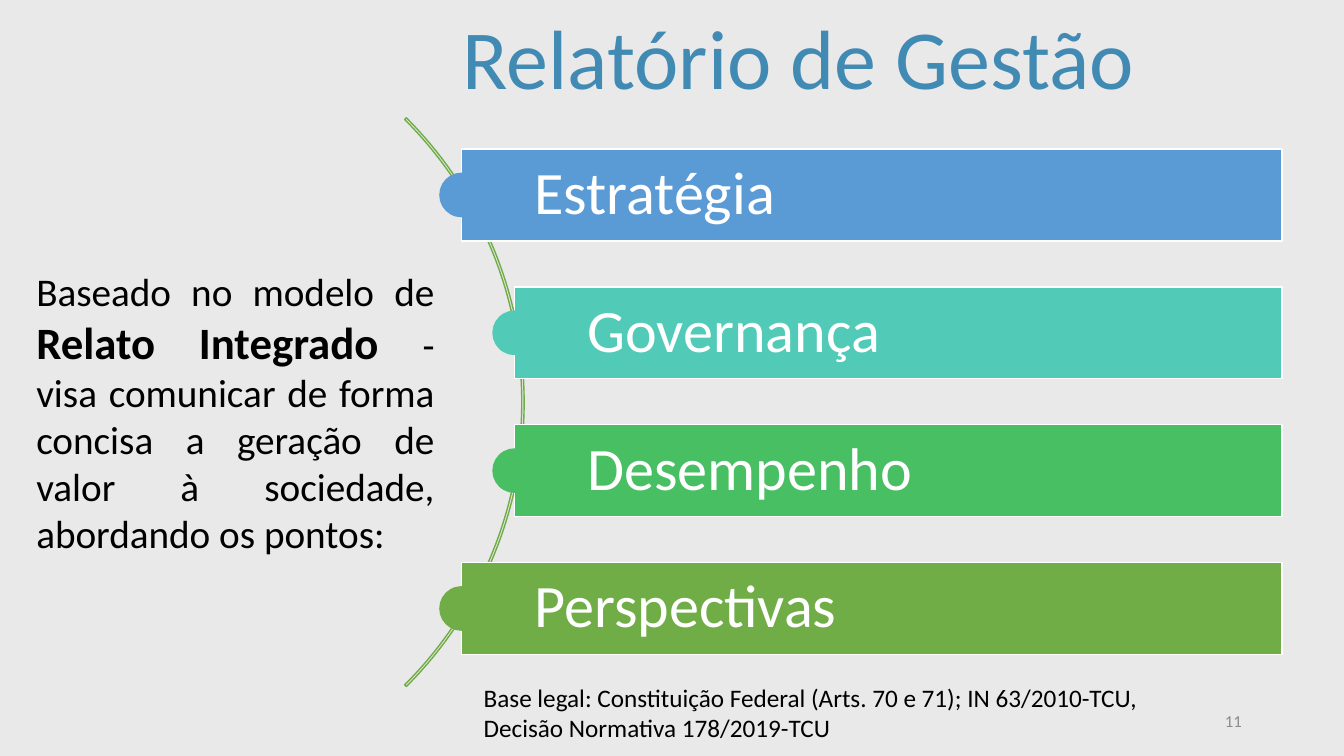
"""Build the management report slide with its four report topics."""
from dataclasses import dataclass

from lxml import etree
from pptx import Presentation
from pptx.dml.color import RGBColor
from pptx.enum.shapes import MSO_SHAPE
from pptx.enum.text import MSO_ANCHOR, MSO_AUTO_SIZE, PP_ALIGN
from pptx.oxml.ns import qn
from pptx.util import Inches, Pt

TOP, MIDDLE = MSO_ANCHOR.TOP, MSO_ANCHOR.MIDDLE
LEFT, RIGHT, JUSTIFY = PP_ALIGN.LEFT, PP_ALIGN.RIGHT, PP_ALIGN.JUSTIFY
RECTANGLE, OVAL, BLOCK_ARC = MSO_SHAPE.RECTANGLE, MSO_SHAPE.OVAL, MSO_SHAPE.BLOCK_ARC
FIXED_SIZE = MSO_AUTO_SIZE.NONE

SLIDE_WIDTH, SLIDE_HEIGHT = Inches(13.333), Inches(7.5)
COLUMN, ROW = SLIDE_WIDTH / 100, SLIDE_HEIGHT / 100


@dataclass(frozen=True)
class Theme:
    """Font, colours and type sizes of the slide."""
    font: str = "Calibri"
    background: str = "E9E9E9"
    title: str = "418AB3"
    ink: str = "000000"
    muted: str = "8C8C8C"
    white: str = "FFFFFF"
    arc: str = "70AD47"
    title_size: int = 60
    topic_size: int = 43
    emphasis_size: int = 32
    body_size: int = 28
    legal_size: int = 18
    number_size: int = 12


@dataclass(frozen=True)
class Area:
    """A place on the grid of 100 columns and 100 rows."""
    column: float
    row: float
    columns: float
    rows: float

    def emu(self) -> tuple[int, int, int, int]:
        """Return left, top, width and height in EMU."""
        return (round(self.column * COLUMN), round(self.row * ROW),
                round(self.columns * COLUMN), round(self.rows * ROW))


@dataclass(frozen=True)
class Topic:
    """One report topic with its bar colour and left column."""
    label: str
    colour: str
    column: float


THEME = Theme()
OUTER, INNER = 34.35, 38.3
TOPICS = (
    Topic("Estratégia", "5B9BD5", OUTER),
    Topic("Governança", "52CAB8", INNER),
    Topic("Desempenho", "49BF64", INNER),
    Topic("Perspectivas", "70AD47", OUTER),
)
BAR_RIGHT, BAR_TOP, BAR_ROWS, BAR_PITCH = 95.4, 19.73, 12.13, 18.23
NODE_COLUMNS, NODE_ROWS = 3.23, 5.73
INTRO = ("Baseado no modelo de ", "Relato Integrado ",
         "- visa comunicar de forma concisa a geração de valor à sociedade, "
         "abordando os pontos:")
LEGAL_BASIS = ("Base legal: Constituição Federal (Arts. 70 e 71); IN 63/2010-TCU, "
               "Decisão Normativa 178/2019-TCU")


def style_run(run, size: int, colour: str, bold: bool = False) -> None:
    """Set the font, size, colour and weight of a run."""
    run.font.name = THEME.font
    run.font.size = Pt(size)
    run.font.bold = bold
    run.font.color.rgb = RGBColor.from_string(colour)


def write(holder, text: str, size: int, colour: str, align=LEFT, anchor=TOP):
    """Write one wrapped paragraph into a shape and return it."""
    frame = holder.text_frame
    frame.text = text
    frame.word_wrap = True
    frame.auto_size = FIXED_SIZE
    frame.vertical_anchor = anchor
    paragraph = frame.paragraphs[0]
    paragraph.alignment = align
    for run in paragraph.runs:
        style_run(run, size, colour)
    return paragraph


def place(holder, area: Area) -> None:
    """Move a placeholder to an area of the grid."""
    holder.left, holder.top, holder.width, holder.height = area.emu()


def add_figure(slide, kind, area: Area, line: str, fill: str | None = None):
    """Add an outlined preset shape without a shadow."""
    figure = slide.shapes.add_shape(kind, *area.emu())
    figure.shadow.inherit = False
    figure.line.color.rgb = RGBColor.from_string(line)
    figure.line.width = Pt(1)
    if fill is None:
        figure.fill.background()
    else:
        figure.fill.solid()
        figure.fill.fore_color.rgb = RGBColor.from_string(fill)
    return figure


def add_intro(holder) -> None:
    """Fill the body placeholder with the justified introduction."""
    place(holder, Area(-1.8, 34.67, 34.88, 40))
    paragraph = write(holder, INTRO[0], THEME.body_size, THEME.ink, JUSTIFY)
    paragraph.space_before = Pt(0)
    style_run_settings = ((INTRO[1], THEME.emphasis_size, True),
                          (INTRO[2], THEME.body_size, False))
    for text, size, bold in style_run_settings:
        run = paragraph.add_run()
        run.text = text
        style_run(run, size, THEME.ink, bold)
    properties = paragraph.runs[0].font and paragraph._p.get_or_add_pPr()
    properties.set("marL", str(Inches(0.5)))
    properties.set("indent", "0")
    etree.SubElement(properties, qn("a:buNone"))


def add_topic(slide, topic: Topic, index: int) -> None:
    """Draw a topic bar and the round node on its left edge."""
    top = BAR_TOP + index * BAR_PITCH
    bar = add_figure(slide, RECTANGLE,
                     Area(topic.column, top, BAR_RIGHT - topic.column, BAR_ROWS),
                     THEME.white, topic.colour)
    paragraph = write(bar, topic.label, THEME.topic_size, THEME.white, anchor=MIDDLE)
    paragraph.line_spacing = 0.9
    frame = bar.text_frame
    frame.margin_left = round(5.4 * COLUMN)
    frame.margin_right = frame.margin_top = frame.margin_bottom = round(0.9 * COLUMN)
    node = Area(topic.column - NODE_COLUMNS / 2, top + (BAR_ROWS - NODE_ROWS) / 2,
                NODE_COLUMNS, NODE_ROWS)
    add_figure(slide, OVAL, node, topic.colour, topic.colour)


def add_label(slide, area: Area, text: str, size: int, colour: str,
              align=LEFT, anchor=TOP) -> None:
    """Add a text box on the grid."""
    write(slide.shapes.add_textbox(*area.emu()), text, size, colour, align, anchor)


def main() -> None:
    """Build and save the slide."""
    deck = Presentation()
    deck.slide_width, deck.slide_height = SLIDE_WIDTH, SLIDE_HEIGHT
    slide = deck.slides.add_slide(deck.slide_layouts[1])
    slide.background.fill.solid()
    slide.background.fill.fore_color.rgb = RGBColor.from_string(THEME.background)

    place(slide.shapes.title, Area(33.68, 0, 63.45, 14.8))
    write(slide.shapes.title, "Relatório de Gestão", THEME.title_size, THEME.title)
    add_intro(slide.placeholders[1])
    add_label(slide, Area(70.65, 92.67, 22.5, 5.33), "11",
              THEME.number_size, THEME.muted, RIGHT, MIDDLE)

    arc = add_figure(slide, BLOCK_ARC, Area(-20.85, 0, 59.85, 106.4), THEME.arc)
    for position, value in enumerate((189, 27, 0.003)):
        arc.adjustments[position] = value
    for index, topic in enumerate(TOPICS):
        add_topic(slide, topic, index)
    add_label(slide, Area(35.25, 89.6, 52.88, 9.47), LEGAL_BASIS,
              THEME.legal_size, THEME.ink)
    deck.save("out.pptx")


if __name__ == "__main__":
    main()
